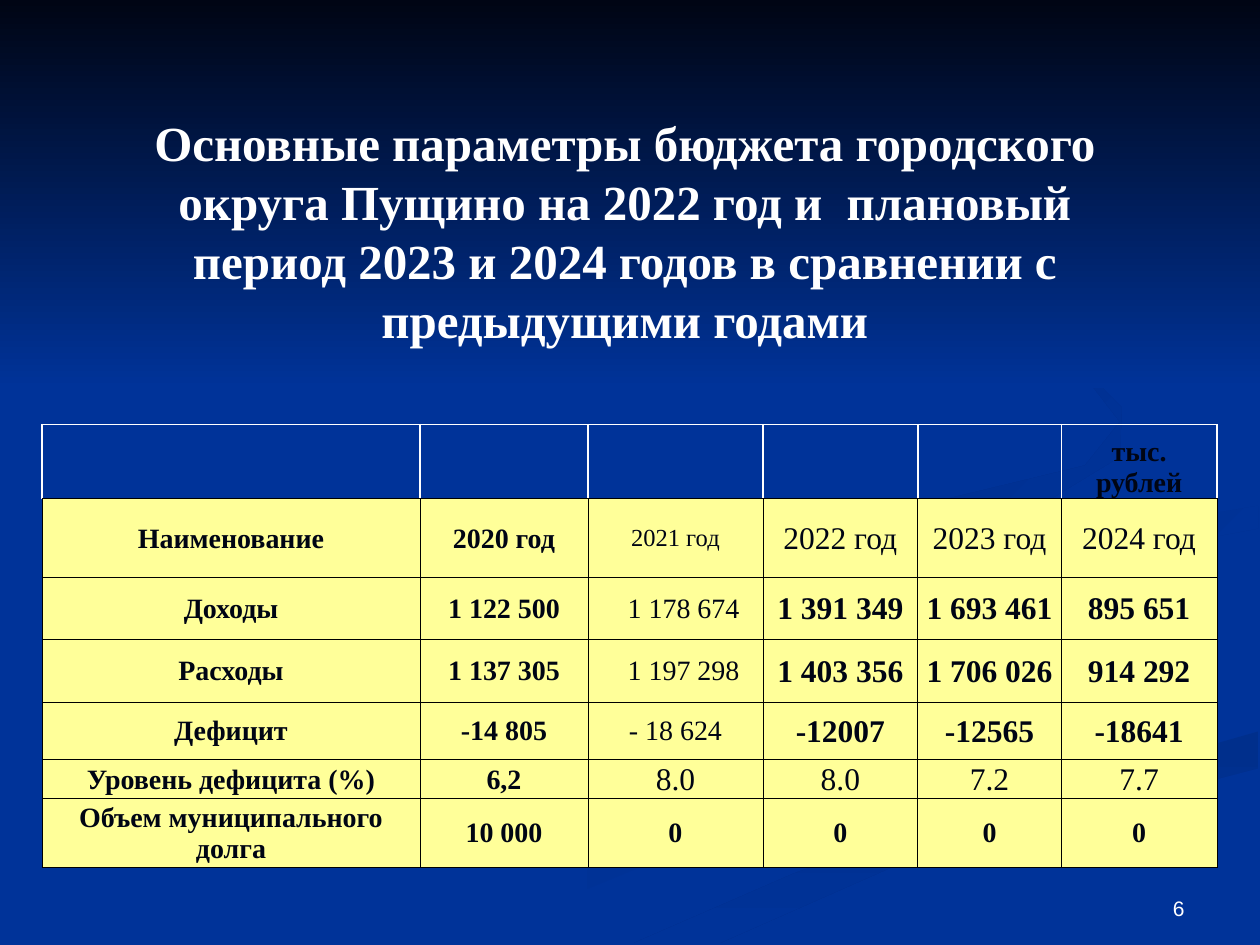
from dataclasses import dataclass

from lxml.etree import SubElement
from pptx import Presentation
from pptx.dml.color import RGBColor
from pptx.enum.shapes import MSO_SHAPE
from pptx.enum.text import MSO_ANCHOR, MSO_AUTO_SIZE, PP_ALIGN
from pptx.oxml.ns import qn
from pptx.util import Pt


@dataclass(frozen=True)
class Theme:
    blue: str = "003399"
    night: str = "000514"
    white: str = "FFFFFF"
    black: str = "000000"
    cream: str = "FFFF99"
    wave: str = "003193"
    shade: str = "002F8C"
    serif: str = "Times New Roman"
    sans: str = "Arial"
    title: int = 28
    large: int = 18
    body: int = 16
    small: int = 14
    number: int = 12


THEME = Theme()

# Wave outlines: start colour, end colour, angle, points
WAVES = [
    (THEME.blue, THEME.wave, 0, [
        (562, 398), (414, 330), (560, 400), (565, 412), (443, 453),
        (216, 539), (260, 539), (406, 479), (566, 433), (575, 416)]),
    (THEME.blue, THEME.wave, 315, [
        (679, 410), (536, 355), (521, 334), (532, 355), (648, 401),
        (661, 418), (644, 436), (677, 418)]),
    (THEME.shade, THEME.blue, 270, [
        (362, 539), (411, 539), (520, 491), (719, 439), (719, 418),
        (550, 466), (454, 499)]),
    (THEME.wave, THEME.blue, 315, [
        (562, 331), (580, 348), (595, 357), (580, 340), (607, 323),
        (719, 302), (719, 289), (623, 305)]),
    (THEME.shade, THEME.blue, 315, [
        (492, 310), (594, 289), (640, 261), (641, 233), (607, 198),
        (549, 168), (609, 201), (640, 241), (620, 266), (450, 307),
        (415, 333), (448, 360), (427, 338), (449, 320)]),
]

# Table contents
COLUMN_WIDTHS = [216, 96, 100, 88.5, 82, 89]
ROW_HEIGHTS = [42.5, 44.6, 35.7, 36, 32.6, 22.3, 39.3]
ROWS = [
    ["", "", "", "", "", "тыс. рублей"],
    ["Наименование", "2020 год", "2021 год", "2022 год", "2023 год", "2024 год"],
    ["Доходы", "1 122 500", "1 178 674", "1 391 349", "1 693 461", "895 651"],
    ["Расходы", "1 137 305", "1 197 298", "1 403 356", "1 706 026", "914 292"],
    ["Дефицит", "-14 805", "- 18 624", "-12007", "-12565", "-18641"],
    ["Уровень дефицита (%)", "6,2", "8.0", "8.0", "7.2", "7.7"],
    ["Объем муниципального долга", "10 000", "0", "0", "0", "0"],
]
UNIT, HEADER, INCOME, SPENDING, DEFICIT, LEVEL, DEBT = range(len(ROWS))


def write(frame, text, *, size, color, font=THEME.serif, bold=False,
          align=PP_ALIGN.CENTER):
    para = frame.paragraphs[0]
    para.alignment = align
    span = para.add_run()
    span.text = text
    span.font.name = font
    span.font.size = Pt(size)
    span.font.bold = bold
    span.font.color.rgb = RGBColor.from_string(color)


def cell_format(row, column):
    """Return type size and weight for a table cell."""
    if row in (UNIT, DEBT) or column < 2:
        return THEME.body, True
    if column == 2 and row != LEVEL:
        return (THEME.small if row == HEADER else THEME.body), False
    return THEME.large, row not in (HEADER, LEVEL)


class SlideBuilder:
    def __init__(self, page, theme):
        self.page = page
        self.theme = theme

    def background(self):
        fill = self.page.background.fill
        fill.solid()
        fill.fore_color.rgb = RGBColor.from_string(self.theme.blue)

    def paint(self, shape, start, end, angle):
        shape.shadow.inherit = False
        shape.line.fill.background()
        shape.fill.gradient()
        shape.fill.gradient_angle = angle
        for stop, color in zip(shape.fill.gradient_stops, (start, end)):
            stop.color.rgb = RGBColor.from_string(color)

    def wave(self, start, end, angle, points):
        builder = self.page.shapes.build_freeform(*points[0], scale=Pt(1))
        builder.add_line_segments(points[1:], close=True)
        self.paint(builder.convert_to_shape(), start, end, angle)

    def sky(self, width, height):
        shape = self.page.shapes.add_shape(
            MSO_SHAPE.RECTANGLE, 0, 0, Pt(width), Pt(height))
        self.paint(shape, self.theme.night, self.theme.blue, 270)

    def title(self, text, left, top, width, height):
        box = self.page.shapes.title
        box.left, box.top, box.width, box.height = map(Pt, (left, top, width, height))
        frame = box.text_frame
        frame.word_wrap = True
        frame.auto_size = MSO_AUTO_SIZE.SHAPE_TO_FIT_TEXT
        frame.vertical_anchor = MSO_ANCHOR.MIDDLE
        write(frame, text, size=self.theme.title, color=self.theme.white, bold=True)
        # Bring the title in front of the backdrop
        box.element.getparent().append(box.element)

    def label(self, text, left, top, width, height):
        box = self.page.shapes.add_textbox(*map(Pt, (left, top, width, height)))
        frame = box.text_frame
        frame.word_wrap = True
        frame.vertical_anchor = MSO_ANCHOR.BOTTOM
        write(frame, text, size=self.theme.number, color=self.theme.white,
              font=self.theme.sans, align=PP_ALIGN.RIGHT)

    def border(self, cell, sides):
        properties = cell._tc.get_or_add_tcPr()
        for side in sides:
            line = SubElement(properties, qn(f"a:ln{side}"), w=str(Pt(0.5)))
            fill = SubElement(line, qn("a:solidFill"))
            SubElement(fill, qn("a:srgbClr"), val=self.theme.black)

    def table(self, rows, left, top, widths, heights):
        table = self.page.shapes.add_table(
            len(rows), len(widths), Pt(left), Pt(top),
            Pt(sum(widths)), Pt(sum(heights))).table
        table.first_row = table.horz_banding = False
        for column, width in zip(table.columns, widths):
            column.width = Pt(width)
        for row, height in zip(table.rows, heights):
            row.height = Pt(height)
        for r, texts in enumerate(rows):
            for c, text in enumerate(texts):
                self.cell(table.cell(r, c), text, r, c)

    def cell(self, cell, text, row, column):
        cell.margin_left = cell.margin_right = cell.margin_top = Pt(0.72)
        cell.margin_bottom = 0
        if row == UNIT:
            # Side margins keep the unit on two lines
            cell.margin_left = cell.margin_right = Pt(10)
            cell.vertical_anchor = MSO_ANCHOR.BOTTOM
            self.border(cell, "B")
            cell.fill.background()
        else:
            cell.vertical_anchor = MSO_ANCHOR.MIDDLE
            self.border(cell, "LRTB")
            cell.fill.solid()
            cell.fill.fore_color.rgb = RGBColor.from_string(self.theme.cream)
        if column == 2 and row in (INCOME, SPENDING):
            cell.margin_left = Pt(10)
        if text:
            size, bold = cell_format(row, column)
            write(cell.text_frame, text, size=size, color=self.theme.night, bold=bold)


def main():
    deck = Presentation()
    deck.slide_width, deck.slide_height = Pt(720), Pt(540)
    builder = SlideBuilder(deck.slides.add_slide(deck.slide_layouts[5]), THEME)

    # Backdrop
    builder.background()
    for wave in WAVES:
        builder.wave(*wave)
    builder.sky(720, 222)

    # Title, table and slide number
    builder.title("Основные параметры бюджета городского округа Пущино на 2022 год"
                  " и  плановый период 2023 и 2024 годов в сравнении с предыдущими"
                  " годами", 78, 60, 558, 143)
    builder.table(ROWS, 24, 242.6, COLUMN_WIDTHS, ROW_HEIGHTS)
    builder.label("6", 516, 492, 168, 37.5)

    deck.save("out.pptx")


if __name__ == "__main__":
    main()
